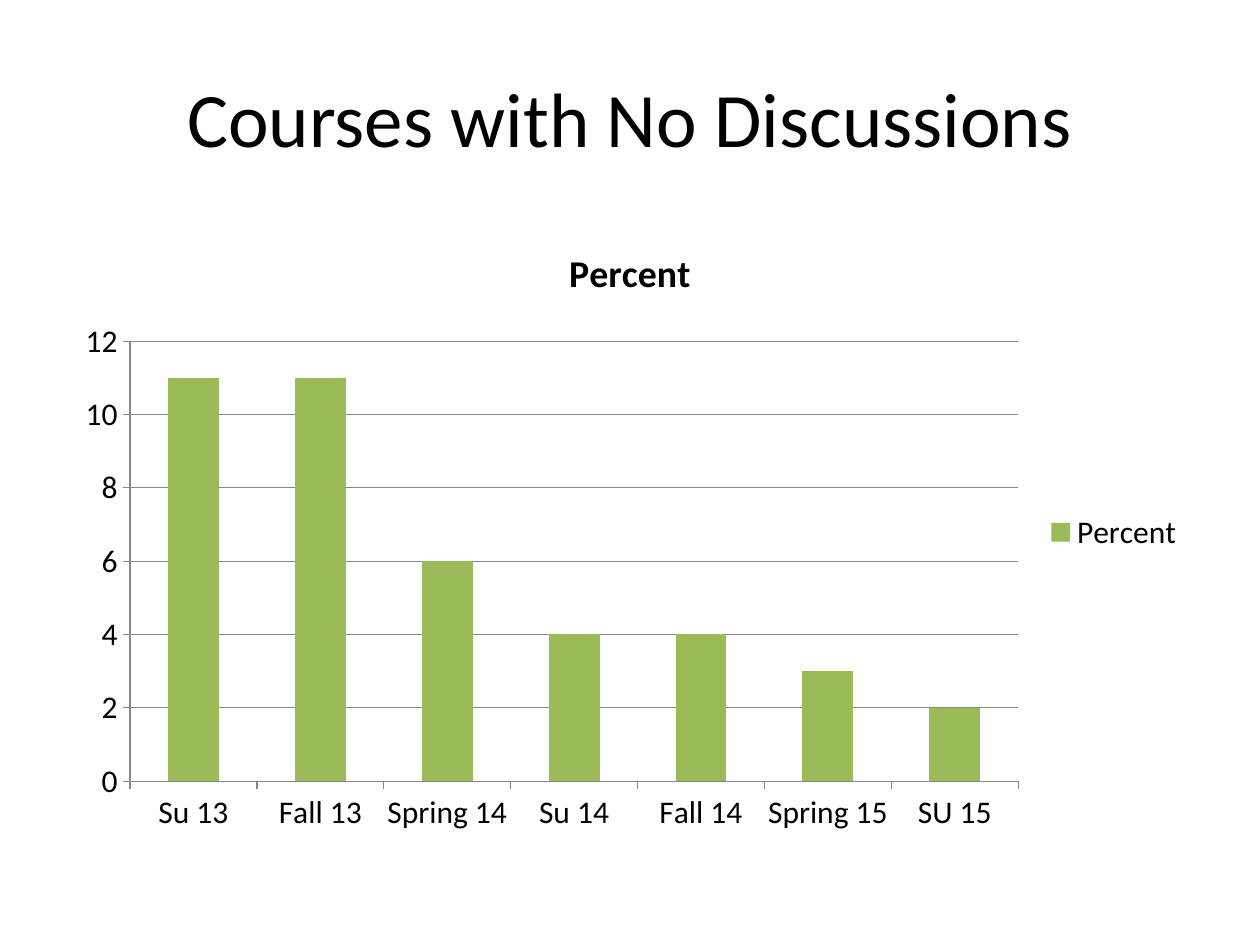
from pptx import Presentation
from pptx.chart.data import CategoryChartData as Data
from pptx.dml.color import RGBColor as RGB
from pptx.enum.chart import XL_CHART_TYPE as Kind, XL_LEGEND_POSITION as Side, XL_TICK_MARK as Tick
from pptx.enum.text import MSO_ANCHOR as Anchor, PP_ALIGN as Align
from pptx.util import Pt

SIZE = (1000, 750)
HEAD = {"text": "Courses with No Discussions", "box": (50, 30, 900, 125)}
PLOT = {"name": "Percent", "box": (50, 175, 900, 495), "fill": "9BBB59", "gap": 150}
ROWS = [("Su 13", 11), ("Fall 13", 11), ("Spring 14", 6), ("Su 14", 4),
        ("Fall 14", 4), ("Spring 15", 3), ("SU 15", 2)]
BASE = {"name": "Calibri", "bold": False}
FONTS = {
    "head": {**BASE, "size": Pt(44)},
    "chart": {**BASE, "size": Pt(18)},
    "title": {**BASE, "size": Pt(21.6), "bold": True},
}
INK, LINE = "000000", "878787"
SCALE = 9144


def px(*nums):
    return [n * SCALE for n in nums]


def tint(color):
    return RGB.from_string(color)


def put(item, vals):
    for key, val in vals.items():
        setattr(item, key, val)


def style(font, kind):
    put(font, FONTS[kind])
    font.color.rgb = tint(INK)


def rule(line):
    line.color.rgb = tint(LINE)
    line.width = Pt(0.75)


def add_head(slide):
    frame = slide.shapes.add_textbox(*px(*HEAD["box"])).text_frame
    put(frame, {"word_wrap": True, "vertical_anchor": Anchor.MIDDLE})
    par = frame.paragraphs[0]
    put(par, {"text": HEAD["text"], "alignment": Align.CENTER})
    style(par.runs[0].font, "head")


def add_plot(slide):
    cats, vals = zip(*ROWS)
    data = Data()
    data.categories = cats
    data.add_series(PLOT["name"], vals)
    chart = slide.shapes.add_chart(Kind.COLUMN_CLUSTERED, *px(*PLOT["box"]), data).chart
    style(chart.font, "chart")

    chart.has_title = True
    par = chart.chart_title.text_frame.paragraphs[0]
    par.text = PLOT["name"]
    style(par.runs[0].font, "title")
    chart.chart_title.include_in_layout = False

    chart.has_legend = True
    put(chart.legend, {"position": Side.RIGHT, "include_in_layout": False})

    for axis in (chart.category_axis, chart.value_axis):
        put(axis, {"major_tick_mark": Tick.OUTSIDE, "minor_tick_mark": Tick.NONE})
        rule(axis.format.line)
    put(chart.value_axis, {"minimum_scale": 0, "maximum_scale": 12, "major_unit": 2,
                           "has_major_gridlines": True})
    rule(chart.value_axis.major_gridlines.format.line)

    plot = chart.plots[0]
    put(plot, {"gap_width": PLOT["gap"], "vary_by_categories": False})
    fill = plot.series[0].format.fill
    fill.solid()
    fill.fore_color.rgb = tint(PLOT["fill"])


def main():
    """Build the slide on discussion-free courses and save it."""
    deck = Presentation()
    deck.slide_width, deck.slide_height = px(*SIZE)
    slide = deck.slides.add_slide(deck.slide_layouts[6])
    add_head(slide)
    add_plot(slide)
    deck.save("out.pptx")


if __name__ == "__main__":
    main()
